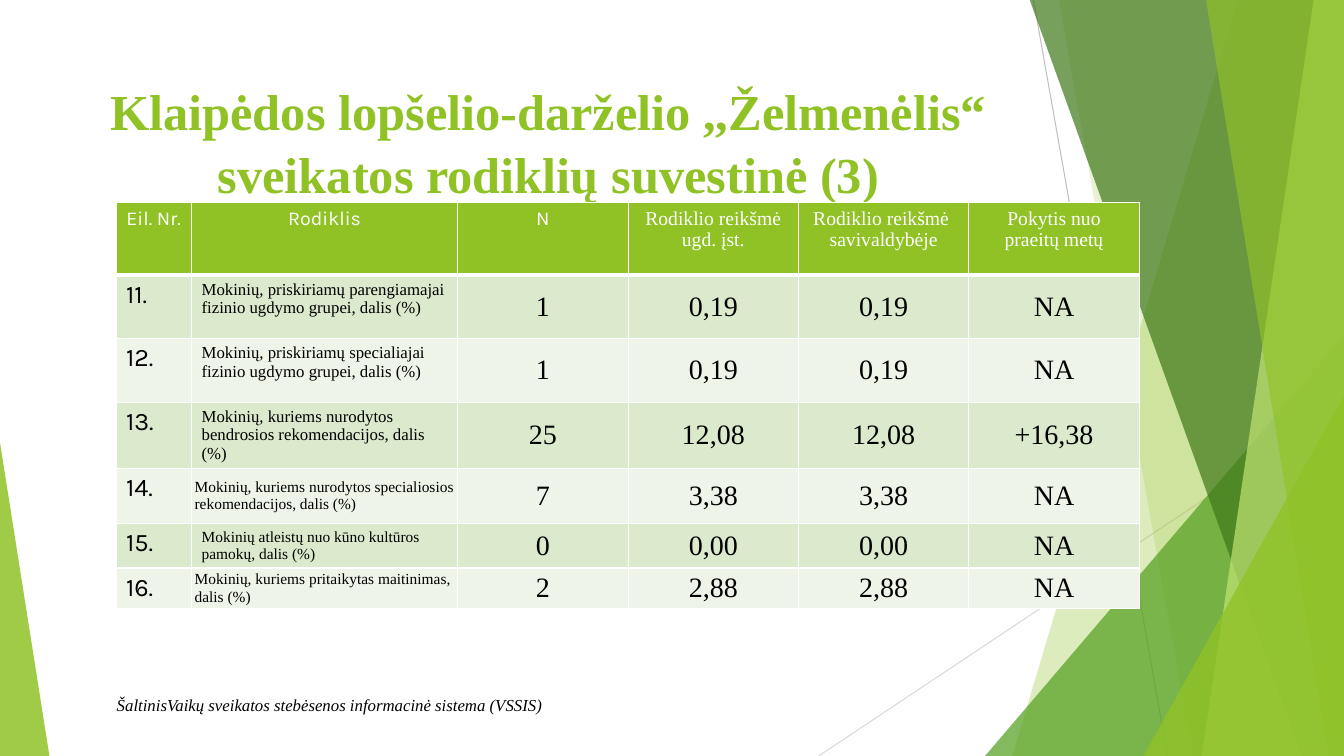
from dataclasses import dataclass
from typing import Any

import lxml.etree
import pptx
import pptx.dml.color
import pptx.enum.shapes
import pptx.enum.text
import pptx.oxml.ns
import pptx.util

Inches = pptx.util.Inches
RGBColor = pptx.dml.color.RGBColor
Align = pptx.enum.text.PP_ALIGN
Anchor = pptx.enum.text.MSO_ANCHOR
qn = pptx.oxml.ns.qn

GREEN = RGBColor(0x90, 0xC2, 0x26)
MID_GREEN = RGBColor(0x54, 0xA0, 0x21)
DARK_GREEN = RGBColor(0x3F, 0x78, 0x19)
LIGHT_GREEN = RGBColor(0xC0, 0xE4, 0x74)
ODD_ROW = RGBColor(0xDB, 0xE9, 0xCD)
EVEN_ROW = RGBColor(0xEE, 0xF4, 0xE8)
GREY = RGBColor(0xBF, 0xBF, 0xBF)
PALE_GREY = RGBColor(0xD9, 0xD9, 0xD9)
WHITE = RGBColor(0xFF, 0xFF, 0xFF)
BLACK = RGBColor(0, 0, 0)
SERIF = "Times New Roman"
SANS = "Karla"
WIDTH, HEIGHT = 13.33, 7.5
BAND_TOP = -0.01


@dataclass
class Ray:
    start: tuple[float, float]
    end: tuple[float, float]
    color: RGBColor


@dataclass
class Band:
    """A strip that runs from its slanted left edge to the right slide edge."""
    top_x: float
    bottom_x: float
    color: RGBColor
    opacity: int


@dataclass
class Wedge:
    """A right triangle that stands on the bottom slide edge."""
    left: float
    top: float
    width: float
    apex: float
    color: RGBColor
    opacity: int


@dataclass
class Indicator:
    number: str
    name: str
    name_size: int
    tight: bool
    values: tuple[str, ...]


DECORATIONS = [
    Ray((10.25, 0), (11.58, HEIGHT), GREY),
    Ray((WIDTH, 4.03), (8.12, HEIGHT), PALE_GREY),
    Band(12.28, 10.04, GREEN, 30),
    Band(10.5, 11.83, GREEN, 20),
    Wedge(9.77, 3.33, 3.56, 1, MID_GREEN, 72),
    Band(10.21, 12.91, DARK_GREEN, 70),
    Band(13.03, 11.92, LIGHT_GREEN, 70),
    Band(11.96, 13.18, GREEN, 65),
    Wedge(11.34, 3.93, 1.99, 1, GREEN, 80),
    Wedge(0, 4.39, 0.49, 0, GREEN, 85),
]
HEADERS = [
    ("Eil. Nr.", SANS), ("Rodiklis", SANS), ("N", SANS),
    ("Rodiklio reikšmė ugd. įst.", SERIF),
    ("Rodiklio reikšmė  savivaldybėje", SERIF),
    ("Pokytis nuo praeitų metų", SERIF),
]
INDICATORS = [
    Indicator("11.", "Mokinių, priskiriamų parengiamajai fizinio ugdymo grupei, dalis (%)",
              12, False, ("1", "0,19", "0,19", "NA")),
    Indicator("12.", "Mokinių, priskiriamų specialiajai fizinio ugdymo grupei, dalis (%)",
              12, False, ("1", "0,19", "0,19", "NA")),
    Indicator("13.", "Mokinių, kuriems nurodytos bendrosios rekomendacijos, dalis (%)",
              12, False, ("25", "12,08", "12,08", "+16,38")),
    Indicator("14.", "Mokinių, kuriems nurodytos specialiosios rekomendacijos, dalis (%)",
              11, True, ("7", "3,38", "3,38", "NA")),
    Indicator("15.", "Mokinių atleistų nuo kūno kultūros pamokų, dalis (%)",
              11, False, ("0", "0,00", "0,00", "NA")),
    Indicator("16.", "Mokinių, kuriems pritaikytas maitinimas, dalis (%)",
              11, True, ("2", "2,88", "2,88", "NA")),
]
COLUMN_WIDTHS = [0.75, 2.64] + [1.69] * 4
ROW_HEIGHTS = [0.72, 0.63, 0.63, 0.63, 0.55, 0.42, 0.38]


def apply(target: Any, values: dict[str, Any]) -> None:
    for name, value in values.items():
        setattr(target, name, value)


def write(frame: Any, text: str, font: str, size: int, color: RGBColor,
          align: Any = Align.LEFT, **style: bool) -> None:
    para = frame.paragraphs[0]
    para.alignment = align
    span = para.add_run()
    span.text = text
    apply(span.font, {"name": font, "size": pptx.util.Pt(size), **style})
    span.font.color.rgb = color


def paint(shape: Any, color: RGBColor, opacity: int) -> None:
    shape.shadow.inherit = False
    shape.line.fill.background()
    shape.fill.solid()
    shape.fill.fore_color.rgb = color
    tint = shape.element.spPr.find(qn("a:solidFill"))[0]
    lxml.etree.SubElement(tint, qn("a:alpha"), val=str(opacity * 1000))


def draw_decoration(page: Any, item: Ray | Band | Wedge) -> None:
    if isinstance(item, Ray):
        line = page.shapes.add_connector(
            pptx.enum.shapes.MSO_CONNECTOR.STRAIGHT,
            *(Inches(value) for value in item.start + item.end))
        line.line.color.rgb = item.color
        line.line.width = pptx.util.Pt(0.75)
        lxml.etree.SubElement(line.element.spPr, qn("a:effectLst"))
        return
    if isinstance(item, Band):
        corners = [(WIDTH, BAND_TOP), (WIDTH, HEIGHT), (item.bottom_x, HEIGHT)]
        builder = page.shapes.build_freeform(Inches(item.top_x), Inches(BAND_TOP))
        builder.add_line_segments([(Inches(x), Inches(y)) for x, y in corners])
        shape = builder.convert_to_shape()
    else:
        shape = page.shapes.add_shape(
            pptx.enum.shapes.MSO_SHAPE.ISOSCELES_TRIANGLE, Inches(item.left),
            Inches(item.top), Inches(item.width), Inches(HEIGHT - item.top))
        shape.adjustments[0] = item.apex
    paint(shape, item.color, item.opacity)


def format_cell(cell: Any, row: int, fill: RGBColor) -> None:
    """Draw white borders, thick below the header, then fill the cell."""
    properties = cell._tc.get_or_add_tcPr()
    widths = {"L": 1, "R": 1, "T": 3 if row == 1 else 1, "B": 3 if row == 0 else 1}
    for side, width in widths.items():
        border = lxml.etree.SubElement(
            properties, qn(f"a:ln{side}"), w=str(pptx.util.Pt(width)))
        paint_node = lxml.etree.SubElement(border, qn("a:solidFill"))
        lxml.etree.SubElement(paint_node, qn("a:srgbClr"), val=str(WHITE))
    cell.fill.solid()
    cell.fill.fore_color.rgb = fill


def tighten(cell: Any) -> None:
    sides = ("left", "right", "top", "bottom")
    apply(cell, {f"margin_{side}": Inches(0.03) for side in sides})
    cell.vertical_anchor = Anchor.MIDDLE


def add_indicator_table(page: Any) -> None:
    table = page.shapes.add_table(
        len(ROW_HEIGHTS), len(COLUMN_WIDTHS), Inches(1.15), Inches(2.01),
        Inches(sum(COLUMN_WIDTHS)), Inches(sum(ROW_HEIGHTS))).table
    for column, width in zip(table.columns, COLUMN_WIDTHS):
        column.width = Inches(width)
    for index, height in enumerate(ROW_HEIGHTS):
        table.rows[index].height = Inches(height)
        fill = GREEN if index == 0 else ODD_ROW if index % 2 else EVEN_ROW
        for cell in table.rows[index].cells:
            format_cell(cell, index, fill)
    for cell, (text, font) in zip(table.rows[0].cells, HEADERS):
        write(cell.text_frame, text, font, 14, WHITE, Align.CENTER, bold=False)
    for index, item in enumerate(INDICATORS, 1):
        number, name, *values = table.rows[index].cells
        write(number.text_frame, item.number, SANS, 18, BLACK)
        write(name.text_frame, item.name, SERIF, item.name_size, BLACK)
        if item.tight:
            tighten(name)
        for cell, text in zip(values, item.values):
            write(cell.text_frame, text, SERIF, 20, BLACK, Align.CENTER)
            tighten(cell)


def place(left: float, top: float, width: float, height: float) -> dict[str, Any]:
    return {"left": Inches(left), "top": Inches(top),
            "width": Inches(width), "height": Inches(height)}


def main() -> None:
    deck = pptx.Presentation()
    apply(deck, {"slide_width": Inches(WIDTH), "slide_height": Inches(HEIGHT)})
    page = deck.slides.add_slide(deck.slide_layouts[5])
    for item in DECORATIONS:
        draw_decoration(page, item)
    title = page.shapes.title
    apply(title, place(0.74, 0.67, 9.4, 1.44))
    apply(title.text_frame, {"word_wrap": True, "vertical_anchor": Anchor.MIDDLE,
                             "auto_size": pptx.enum.text.MSO_AUTO_SIZE.NONE})
    write(title.text_frame, "Klaipėdos lopšelio-darželio ,,Želmenėlis“ sveikatos rodiklių suvestinė (3)",
          SERIF, 36, GREEN, Align.CENTER, bold=True)
    title.text_frame.paragraphs[0].line_spacing = 1.05
    add_indicator_table(page)
    box = page.shapes.add_textbox(**place(1.06, 6.84, 6.67, 0.3))
    box.text_frame.word_wrap = True
    write(box.text_frame, "ŠaltinisVaikų sveikatos stebėsenos informacinė sistema (VSSIS)",
          SERIF, 12, BLACK, italic=True)
    deck.save("out.pptx")


if __name__ == "__main__":
    main()
